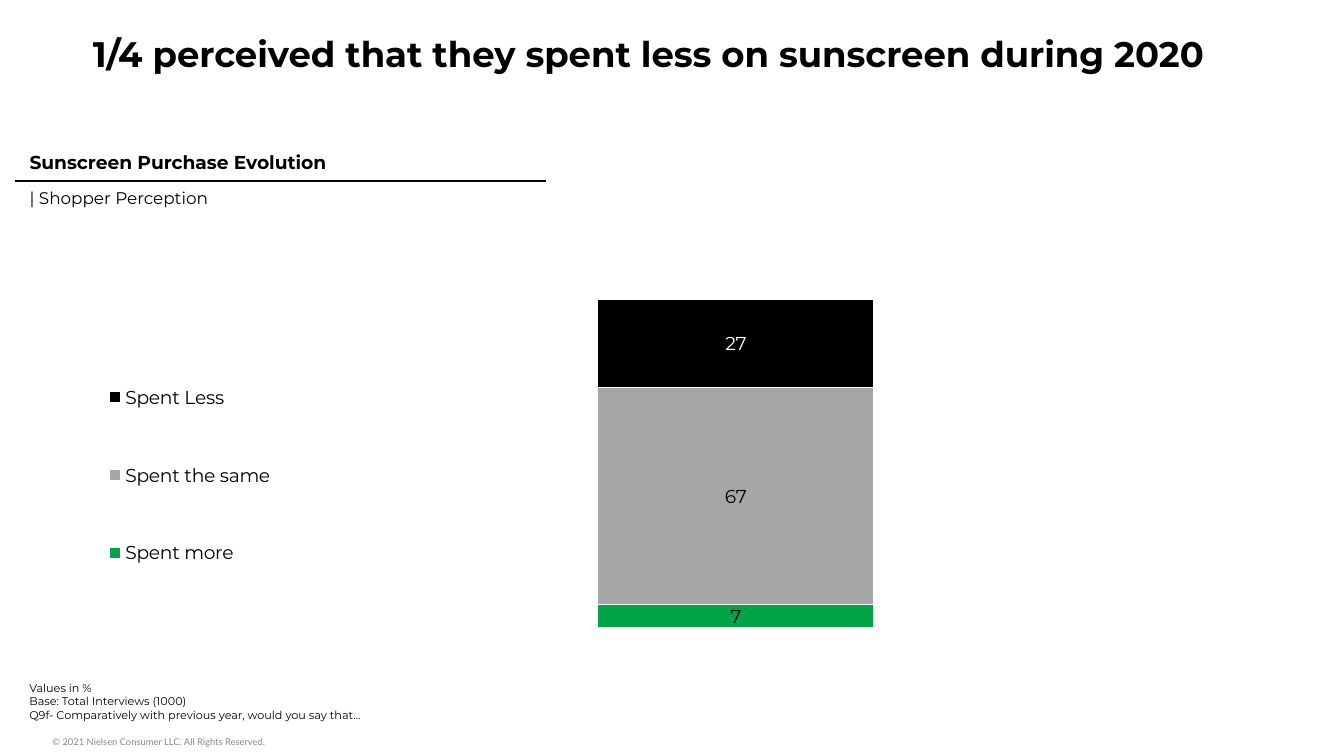
from dataclasses import dataclass

from lxml.etree import SubElement
from pptx import Presentation
from pptx.chart.data import CategoryChartData
from pptx.dml.color import RGBColor
from pptx.enum.chart import XL_CHART_TYPE, XL_LABEL_POSITION, XL_LEGEND_POSITION
from pptx.enum.text import MSO_ANCHOR, PP_ALIGN
from pptx.oxml import parse_xml
from pptx.oxml.ns import nsdecls, qn
from pptx.util import Inches, Pt


@dataclass(frozen=True)
class Theme:
    black: RGBColor = RGBColor(0, 0, 0)
    white: RGBColor = RGBColor(255, 255, 255)
    green: RGBColor = RGBColor(0x00, 0xA3, 0x46)
    gray: RGBColor = RGBColor(0xA6, 0xA6, 0xA6)
    footer_gray: RGBColor = RGBColor(0x88, 0x88, 0x88)
    font: str = "Montserrat"
    chart_font: str = "Roboto"
    footer_font: str = "Lato"
    title_size: int = 19
    heading_size: int = 10
    subheading_size: int = 9
    chart_size: int = 10
    note_size: int = 6
    footer_size: int = 5


THEME = Theme()
CHART_WIDTH, CHART_HEIGHT = Inches(8.92), Inches(3.11)


def style_font(font, size, color=THEME.black, name=THEME.font, bold=False):
    font.size = Pt(size)
    font.name = name
    font.bold = bold
    font.color.rgb = color


def style_text(frame, *style, **options):
    for paragraph in frame.paragraphs:
        paragraph.alignment = PP_ALIGN.LEFT
        for run in paragraph.runs:
            style_font(run.font, *style, **options)


def set_title(slide, text):
    title = slide.shapes.title
    title.left, title.top = Inches(0.59), Inches(0.19)
    title.width, title.height = Inches(9.21), Inches(0.42)
    frame = title.text_frame
    frame.text = text
    frame.vertical_anchor = MSO_ANCHOR.TOP
    style_text(frame, THEME.title_size, bold=True)


def add_text(slide, text, left, top, width, height):
    box = slide.shapes.add_textbox(
        Inches(left), Inches(top), Inches(width), Inches(height))
    frame = box.text_frame
    frame.word_wrap = True
    frame.text = text
    return frame


def add_rule(cell, side):
    border = parse_xml(f'<a:{side} {nsdecls("a")} w="{Pt(1)}"/>')
    fill = SubElement(border, qn("a:solidFill"))
    SubElement(fill, qn("a:srgbClr"), val=str(THEME.black))
    cell.fill.background()
    cell._tc.get_or_add_tcPr().insert(0, border)


def add_heading_table(slide, heading, subheading):
    table = slide.shapes.add_table(
        2, 1, Inches(0.12), Inches(1.08), Inches(3.94), Inches(0.52)).table
    table.first_row = False
    table.horz_banding = False
    rows = [
        (heading, THEME.heading_size, True, "lnB"),
        (subheading, THEME.subheading_size, False, "lnT"),
    ]
    for index, (text, size, bold, side) in enumerate(rows):
        cell = table.cell(index, 0)
        cell.text_frame.text = text
        style_text(cell.text_frame, size, bold=bold)
        add_rule(cell, side)


def set_layout(parent, index, left, top, width, height, inner=False):
    for old in parent.findall(qn("c:layout")):
        parent.remove(old)
    layout = parse_xml(f'<c:layout {nsdecls("c")}/>')
    manual = SubElement(layout, qn("c:manualLayout"))
    if inner:
        SubElement(manual, qn("c:layoutTarget"), val="inner")
    for mode in ("xMode", "yMode"):
        SubElement(manual, qn(f"c:{mode}"), val="edge")
    fractions = {
        "x": left / CHART_WIDTH,
        "y": top / CHART_HEIGHT,
        "w": width / CHART_WIDTH,
        "h": height / CHART_HEIGHT,
    }
    for key, fraction in fractions.items():
        SubElement(manual, qn(f"c:{key}"), val=str(fraction))
    parent.insert(index, layout)


def style_series(series, color, label_color, position):
    fill = series.format.fill
    fill.solid()
    fill.fore_color.rgb = color
    series.format.line.color.rgb = THEME.white
    series.format.line.width = Pt(0.75)
    labels = series.data_labels
    labels.show_value = True
    labels.number_format = "0"
    labels.number_format_is_linked = False
    if position is not None:
        labels.position = position
    style_font(labels.font, THEME.chart_size, label_color)


def add_spending_chart(slide):
    center = XL_LABEL_POSITION.CENTER
    answers = [
        ("Spent more", 7, THEME.green, THEME.black, None),
        ("Spent the same", 67, THEME.gray, THEME.black, center),
        ("Spent Less", 27, THEME.black, THEME.white, center),
    ]
    data = CategoryChartData(number_format="0")
    data.categories = ["1"]
    for name, share, *_ in answers:
        data.add_series(name, [share])
    chart = slide.shapes.add_chart(
        XL_CHART_TYPE.COLUMN_STACKED_100,
        Inches(0.51), Inches(2.09), CHART_WIDTH, CHART_HEIGHT, data).chart
    style_font(chart.font, THEME.chart_size, name=THEME.chart_font)
    chart.has_title = False

    plot = chart.plots[0]
    plot.gap_width = 30
    plot.overlap = 100
    plot.vary_by_categories = False
    for series, (_, _, color, label_color, position) in zip(plot.series, answers):
        style_series(series, color, label_color, position)

    chart.category_axis.visible = False
    shares = chart.value_axis
    shares.visible = False
    shares.has_major_gridlines = False
    shares.minimum_scale, shares.maximum_scale = 0, 1

    chart.has_legend = True
    legend = chart.legend
    legend.position = XL_LEGEND_POSITION.LEFT
    legend.include_in_layout = False
    style_font(legend.font, THEME.chart_size)
    set_layout(chart.element.find(f".//{qn('c:plotArea')}"), 0,
               Inches(3.63), Inches(0.14), Inches(2.67), Inches(2.44), inner=True)
    set_layout(chart.element.find(f".//{qn('c:legend')}"), 1,
               Inches(0.26), Inches(0.37), Inches(1.28), Inches(2.15))


def main():
    deck = Presentation()
    deck.slide_width = Inches(10)
    deck.slide_height = deck.slide_width * 9 // 16
    slide = deck.slides.add_slide(deck.slide_layouts[5])

    footer = add_text(
        slide, "© 2021 Nielsen Consumer LLC. All Rights Reserved.",
        0.39, 5.43, 5.54, 0.2)
    footer.margin_left = footer.margin_right = 0
    style_text(footer, THEME.footer_size, THEME.footer_gray, THEME.footer_font)

    add_spending_chart(slide)
    set_title(slide, "1/4 perceived that they spent less on sunscreen during 2020")
    survey_notes = add_text(
        slide,
        "Values in %\nBase: Total Interviews (1000)\n"
        "Q9f- Comparatively with previous year, would you say that…",
        0.12, 5.02, 5.59, 0.4)
    style_text(survey_notes, THEME.note_size)
    add_heading_table(slide, "Sunscreen Purchase Evolution", "| Shopper Perception")

    deck.save("out.pptx")


if __name__ == "__main__":
    main()
